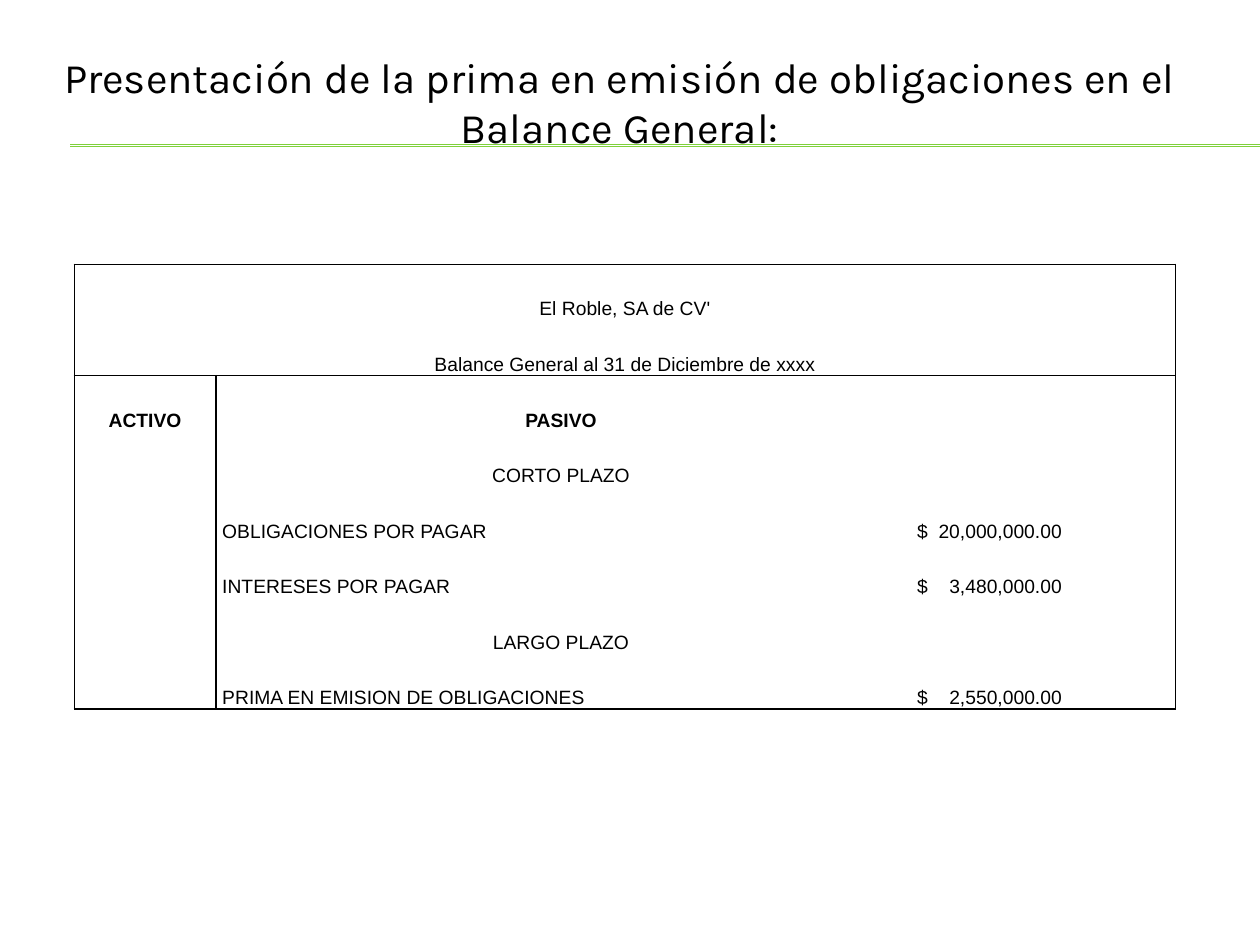
from dataclasses import dataclass

from lxml.etree import SubElement
from pptx import Presentation
from pptx.dml.color import RGBColor
from pptx.enum.shapes import MSO_CONNECTOR
from pptx.enum.text import MSO_ANCHOR, PP_ALIGN
from pptx.oxml.ns import qn
from pptx.util import Cm, Pt

BLACK = RGBColor(0, 0, 0)
GREEN = RGBColor(0x7F, 0xD1, 0x3B)
NO_STYLE = "{2D5ABB26-0587-4C30-8999-92F81FD0307C}"
WIDTHS = (2.85, 13.92, 5.43)
ROW_HEIGHT = 1.12
AMOUNT_TAB = Cm(2.92)
TITLE = "Presentación de la prima en emisión de obligaciones en el Balance General:"
HEADINGS = ("El Roble, SA de CV'", "Balance General al 31 de Diciembre de xxxx")


@dataclass
class BalanceRow:
    concept: str
    amount: str = ""
    asset: str = ""
    bold: bool = False


ROWS = (
    BalanceRow("PASIVO", asset="ACTIVO", bold=True),
    BalanceRow("CORTO PLAZO"),
    BalanceRow("OBLIGACIONES POR PAGAR", "20,000,000.00"),
    BalanceRow("INTERESES POR PAGAR", "3,480,000.00"),
    BalanceRow("LARGO PLAZO"),
    BalanceRow("PRIMA EN EMISION DE OBLIGACIONES", "2,550,000.00"),
)


def add_rule(slide, y: float) -> None:
    line = slide.shapes.add_connector(
        MSO_CONNECTOR.STRAIGHT, Cm(1.42), Cm(y), Cm(25.4), Cm(y))
    line.line.color.rgb = GREEN
    line.line.width = Pt(0.75)
    SubElement(line._element.spPr, qn("a:effectLst"))


def add_run(p, text: str, font: str, size: float, bold: bool = False) -> None:
    r = p.add_run()
    r.text = text
    r.font.name = font
    r.font.size = Pt(size)
    r.font.bold = bold
    r.font.color.rgb = BLACK


def set_borders(cell, sides: str) -> None:
    """Draw the sides named by the letters L, R, T and B; hide the others."""
    tc_pr = cell._tc.get_or_add_tcPr()
    for side in "LRTB":
        ln = SubElement(tc_pr, qn(f"a:ln{side}"), w=str(Pt(1)))
        if side in sides:
            fill = SubElement(ln, qn("a:solidFill"))
            SubElement(fill, qn("a:srgbClr"), val=str(BLACK))
        else:
            SubElement(ln, qn("a:noFill"))
    cell.fill.background()


def write_cell(cell, text: str, align=PP_ALIGN.CENTER, bold: bool = False):
    cell.vertical_anchor = MSO_ANCHOR.BOTTOM
    cell.margin_left = cell.margin_right = Cm(0.13)
    cell.margin_top = cell.margin_bottom = 0
    p = cell.text_frame.paragraphs[0]
    p.alignment = align
    p.line_spacing = 1.15
    p.space_after = Pt(10)
    add_run(p, text, "Arial", 11, bold)
    return p


def write_amount(cell, amount: str) -> None:
    """Set the currency sign at the left and the figure at a right tab stop."""
    p = write_cell(cell, f"$\t{amount}", PP_ALIGN.LEFT)
    cell.margin_left = Cm(0.22)
    tabs = SubElement(p._p.get_or_add_pPr(), qn("a:tabLst"))
    SubElement(tabs, qn("a:tab"), pos=str(AMOUNT_TAB), algn="r")


def add_balance(slide) -> None:
    count = len(HEADINGS) + len(ROWS)
    frame = slide.shapes.add_table(
        count, len(WIDTHS), Cm(1.5), Cm(5.33), Cm(sum(WIDTHS)), Cm(count * ROW_HEIGHT))
    frame._element.find(".//" + qn("a:tableStyleId")).text = NO_STYLE
    table = frame.table
    table.first_row = table.horz_banding = False
    for column, width in zip(table.columns, WIDTHS):
        column.width = Cm(width)
    for row in table.rows:
        row.height = Cm(ROW_HEIGHT)

    for i, heading in enumerate(HEADINGS):
        table.cell(i, 0).merge(table.cell(i, 2))
        write_cell(table.cell(i, 0), heading)
        for j in range(len(WIDTHS)):
            set_borders(table.cell(i, j), "LR" + "TB"[i])

    for i, row in enumerate(ROWS, start=len(HEADINGS)):
        edge = "T" if i == len(HEADINGS) else "B" if i == count - 1 else ""
        asset, concept, amount = (table.cell(i, j) for j in range(len(WIDTHS)))
        for cell, sides in ((asset, "LR"), (concept, "L"), (amount, "R")):
            set_borders(cell, sides + edge)
        if row.asset:
            write_cell(asset, row.asset, bold=row.bold)
        align = PP_ALIGN.LEFT if row.amount else PP_ALIGN.CENTER
        write_cell(concept, row.concept, align, row.bold)
        if row.amount:
            write_amount(amount, row.amount)


def place_heading(slide) -> None:
    title, body = slide.placeholders
    title._element.getparent().remove(title._element)
    slide.shapes._spTree.append(body._element)  # in front of the rules
    body.left, body.top, body.width, body.height = Cm(0.69), Cm(0.91), Cm(23.6), Cm(6.88)
    tf = body.text_frame
    tf.word_wrap = True
    tf.vertical_anchor = MSO_ANCHOR.TOP
    p = tf.paragraphs[0]
    p.alignment = PP_ALIGN.CENTER
    p_pr = p._p.get_or_add_pPr()
    p_pr.set("marL", "0")
    p_pr.set("indent", "0")
    SubElement(p_pr, qn("a:buNone"))
    add_run(p, TITLE, "Karla", 24)


def main() -> None:
    prs = Presentation()
    prs.slide_width, prs.slide_height = Cm(25.4), Cm(19.05)
    slide = prs.slides.add_slide(prs.slide_layouts[1])
    for y in (2.92, 2.95):
        add_rule(slide, y)
    place_heading(slide)
    add_balance(slide)
    prs.save("out.pptx")


if __name__ == "__main__":
    main()
